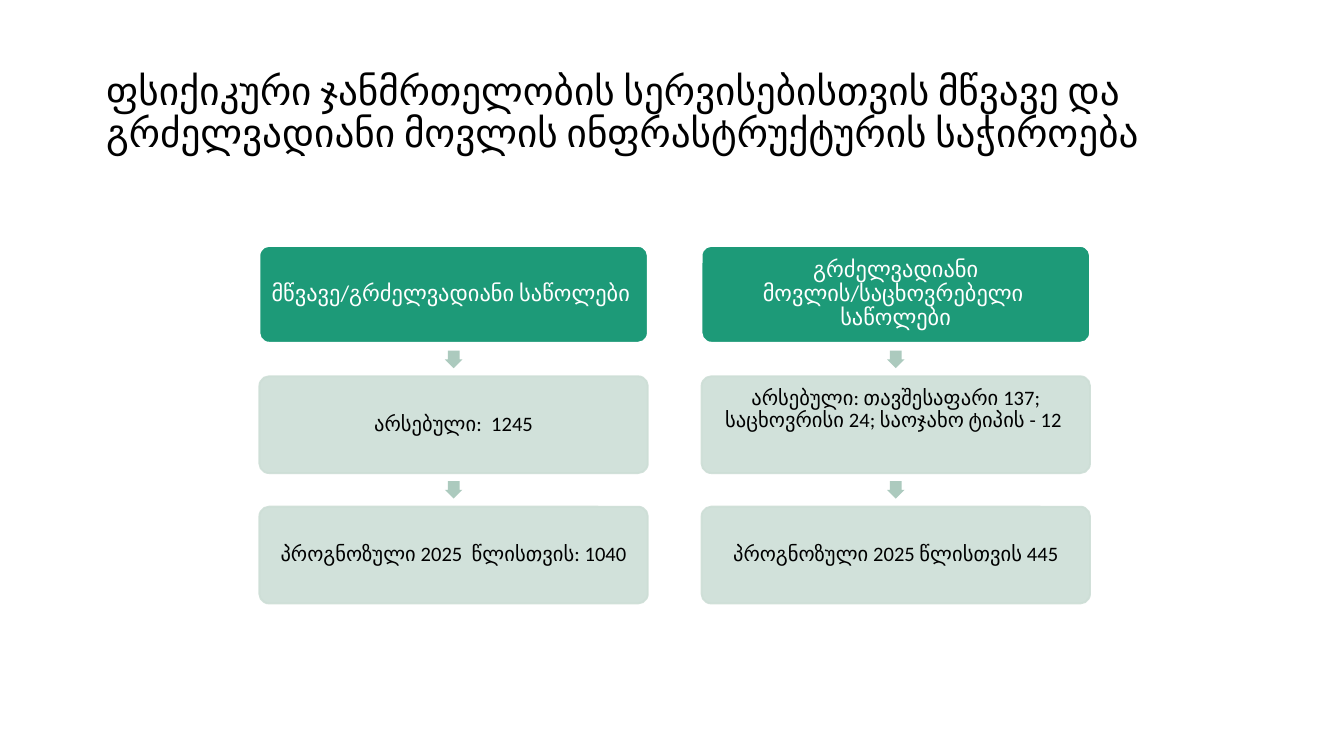
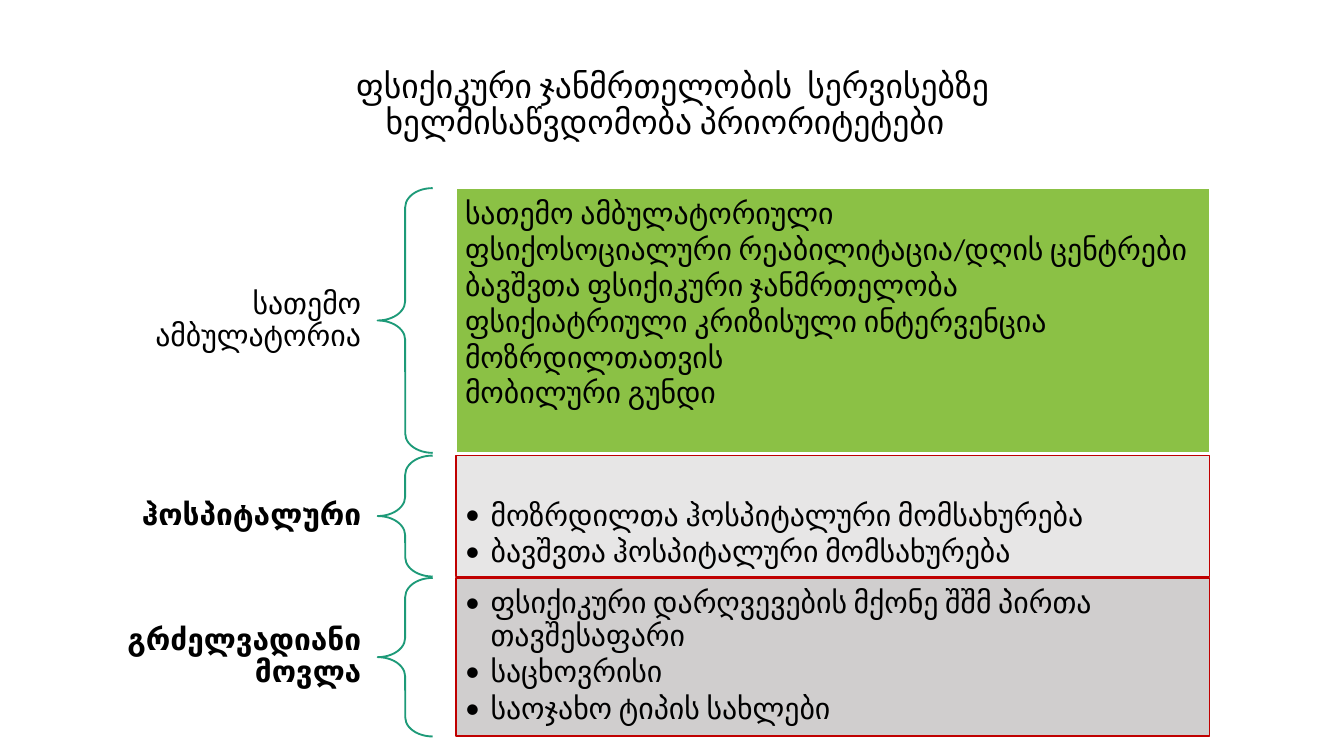
import pptx
import pptx.dml.color
import pptx.enum.shapes
import pptx.enum.text
import pptx.oxml.ns
import pptx.util
import lxml.etree

Inches = pptx.util.Inches
Pt = pptx.util.Pt
RGBColor = pptx.dml.color.RGBColor
Shapes = pptx.enum.shapes.MSO_SHAPE
Align = pptx.enum.text.PP_ALIGN
Anchor = pptx.enum.text.MSO_ANCHOR
qn = pptx.oxml.ns.qn

BLACK = RGBColor(0x00, 0x00, 0x00)
WHITE = RGBColor(0xFF, 0xFF, 0xFF)
TEAL = RGBColor(0x1D, 0x9A, 0x78)
PALE_TEAL = RGBColor(0xCD, 0xDE, 0xD6)
ARROW_TEAL = RGBColor(0xAC, 0xCA, 0xBE)
GREEN = RGBColor(0x8B, 0xC1, 0x45)
LIGHT_GREY = RGBColor(0xE7, 0xE6, 0xE6)
MID_GREY = RGBColor(0xD0, 0xCE, 0xCE)
RED = RGBColor(0xC0, 0x00, 0x00)
FONT = "Calibri"
TITLE_ONLY = 5
SLIDE_WIDTH = Inches(10)
SLIDE_HEIGHT = SLIDE_WIDTH * 9 // 16


def write_text(frame, lines, size=16, color=BLACK, bold=False, align=Align.LEFT,
               spacing=0.9, after=0, bullet=False, insets=(0.1, 0.05, 0.1, 0.05)):
    frame.word_wrap = True
    frame.auto_size = pptx.enum.text.MSO_AUTO_SIZE.NONE
    frame.vertical_anchor = Anchor.MIDDLE
    frame.margin_left, frame.margin_top, frame.margin_right, frame.margin_bottom = map(Inches, insets)
    for index, line in enumerate(lines):
        paragraph = frame.add_paragraph() if index else frame.paragraphs[0]
        paragraph.alignment = align
        paragraph.line_spacing = spacing
        paragraph.space_before = Pt(0)
        paragraph.space_after = Pt(after)
        run = paragraph.add_run()
        run.text = line
        run.font.name = FONT
        run.font.size = Pt(size)
        run.font.bold = bold
        run.font.color.rgb = color
        if bullet:
            properties = paragraph._p.get_or_add_pPr()
            properties.set("marL", str(Inches(0.19)))
            properties.set("indent", str(-Inches(0.19)))
            lxml.etree.SubElement(properties, qn("a:buFont")).set("typeface", FONT)
            lxml.etree.SubElement(properties, qn("a:buChar")).set("char", "•")


def add_shape(slide, kind, box, fill=None, line=None, adjustments=(), opacity=100):
    shape = slide.shapes.add_shape(kind, *map(Inches, box))
    shape.shadow.inherit = False
    for index, value in enumerate(adjustments):
        shape.adjustments[index] = value
    if fill is None:
        shape.fill.background()
    else:
        shape.fill.solid()
        shape.fill.fore_color.rgb = fill
    if line is None:
        shape.line.fill.background()
    else:
        shape.line.color.rgb = line
        shape.line.width = Pt(1)
    if opacity < 100:
        for color in shape._element.spPr.iter(qn("a:srgbClr")):
            lxml.etree.SubElement(color, qn("a:alpha")).set("val", str(opacity * 1000))
    return shape


def add_titled_slide(presentation, title, box, size, align):
    slide = presentation.slides.add_slide(presentation.slide_layouts[TITLE_ONLY])
    placeholder = slide.shapes.title
    placeholder.left, placeholder.top, placeholder.width, placeholder.height = map(Inches, box)
    write_text(placeholder.text_frame, [title], size=size, align=align)
    return slide


def add_bed_column(slide, left, top, steps):
    width, height, pitch, arrow = 2.89, 0.72, 0.97, 0.13
    for index, (text, bottom_inset) in enumerate(steps):
        step_top = top + index * pitch
        is_header = index == 0
        if not is_header:
            arrow_top = step_top - (pitch - height + arrow) / 2
            pointer = add_shape(slide, Shapes.RIGHT_ARROW,
                                (left + (width - arrow) / 2, arrow_top, arrow, arrow),
                                fill=ARROW_TEAL, adjustments=(0.667, 0.5))
            pointer.rotation = 90
        card = add_shape(slide, Shapes.ROUNDED_RECTANGLE, (left, step_top, width, height),
                         fill=TEAL if is_header else PALE_TEAL,
                         line=WHITE if is_header else PALE_TEAL,
                         adjustments=(0.1,), opacity=100 if is_header else 90)
        write_text(card.text_frame, [text], size=12 if is_header else 11,
                   color=WHITE if is_header else BLACK, align=Align.CENTER,
                   insets=(0.02, 0.02, 0.02, bottom_inset))


def add_priority_row(slide, box, label, label_height, bold, lines, fill, line,
                     top_inset=0.07, bottom_inset=0.07, **text_format):
    left, top, width, height = box
    label_width, brace_width, gap = 2.06, 0.41, 0.17
    label_box = slide.shapes.add_textbox(
        *map(Inches, (left, top + (height - label_height) / 2, label_width, label_height)))
    write_text(label_box.text_frame, [label], bold=bold, align=Align.RIGHT,
               insets=(0.12, 0.04, 0.12, 0.04))
    add_shape(slide, Shapes.LEFT_BRACE, (left + label_width, top, brace_width, height),
              line=TEAL, adjustments=(0.35, 0.5))
    offset = label_width + brace_width + gap
    panel = add_shape(slide, Shapes.RECTANGLE, (left + offset, top, width - offset, height),
                      fill=fill, line=line)
    write_text(panel.text_frame, lines, insets=(0.07, top_inset, 0.07, bottom_inset), **text_format)


def build_infrastructure_slide(presentation):
    slide = add_titled_slide(
        presentation,
        "ფსიქიკური ჯანმრთელობის სერვისებისთვის მწვავე და გრძელვადიანი მოვლის ინფრასტრუქტურის საჭიროება",
        (0.69, 0.3, 8.62, 1.09), 21, Align.LEFT)
    columns = [
        [("მწვავე/გრძელვადიანი საწოლები ", 0.02),
         ("არსებული:  1245", 0.02),
         ("პროგნოზული 2025  წლისთვის: 1040", 0.02)],
        [("გრძელვადიანი მოვლის/საცხოვრებელი  საწოლები", 0.02),
         ("არსებული: თავშესაფარი 137; საცხოვრისი 24; საოჯახო ტიპის - 12 ", 0.24),
         ("პროგნოზული 2025 წლისთვის 445", 0.02)],
    ]
    for index, steps in enumerate(columns):
        add_bed_column(slide, 1.93 + index * 3.29, 1.83, steps)


def build_priorities_slide(presentation):
    slide = add_titled_slide(
        presentation,
        "ფსიქიკური ჯანმრთელობის  სერვისებზე ხელმისაწვდომობა პრიორიტეტები  ",
        (1.91, 0.56, 6.19, 0.45), 18, Align.CENTER)
    left, width = 0.75, 8.25
    add_priority_row(
        slide, (left, 1.4, width, 1.97), "სათემო ამბულატორია", 0.19, False,
        ["სათემო ამბულატორიული",
         "ფსიქოსოციალური რეაბილიტაცია/დღის ცენტრები",
         "ბავშვთა ფსიქიკური ჯანმრთელობა",
         "ფსიქიატრიული კრიზისული ინტერვენცია მოზრდილთათვის",
         "მობილური გუნდი"],
        GREEN, WHITE, bottom_inset=0.34, spacing=1.0)
    add_priority_row(
        slide, (left, 3.39, width, 0.9), "ჰოსპიტალური", 0.33, True,
        ["მოზრდილთა ჰოსპიტალური მომსახურება",
         "ბავშვთა ჰოსპიტალური მომსახურება"],
        LIGHT_GREY, RED, top_inset=0.35, after=2.5, bullet=True)
    add_priority_row(
        slide, (left, 4.3, width, 1.18), "გრძელვადიანი მოვლა", 0.57, True,
        ["ფსიქიკური დარღვევების მქონე შშმ პირთა თავშესაფარი",
         "საცხოვრისი",
         "საოჯახო ტიპის სახლები"],
        MID_GREY, RED, after=2.5, bullet=True)


def main():
    presentation = pptx.Presentation()
    presentation.slide_width = SLIDE_WIDTH
    presentation.slide_height = SLIDE_HEIGHT
    build_infrastructure_slide(presentation)
    build_priorities_slide(presentation)
    presentation.save("out.pptx")


if __name__ == "__main__":
    main()
